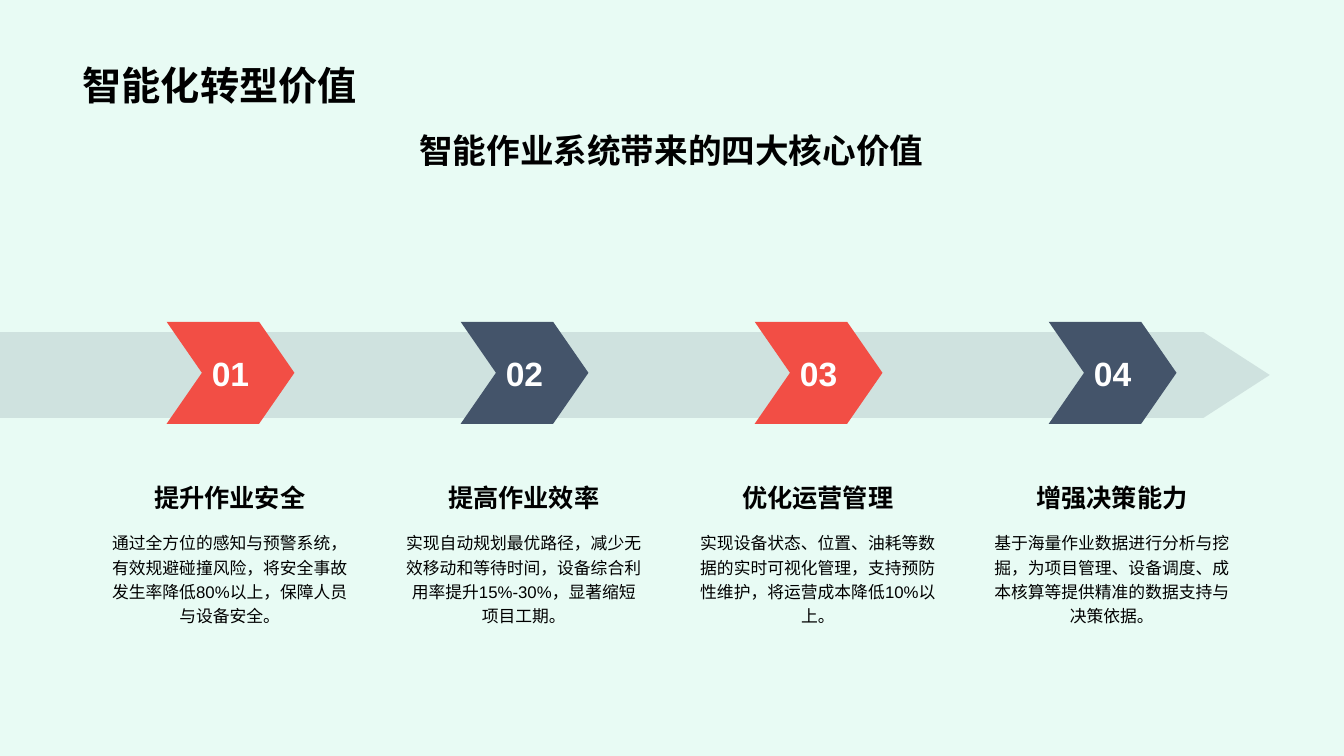
"""Build a slide showing four core values along an arrow band."""
from dataclasses import dataclass

from lxml.etree import SubElement
from pptx import Presentation
from pptx.dml.color import RGBColor
from pptx.enum.lang import MSO_LANGUAGE_ID
from pptx.enum.shapes import MSO_SHAPE
from pptx.enum.text import MSO_ANCHOR, PP_ALIGN
from pptx.oxml.ns import qn
from pptx.shapes.autoshape import Shape
from pptx.slide import Slide
from pptx.util import Cm, Pt


@dataclass(frozen=True)
class Theme:
    font: str = "Arial"
    back: str = "E8FBF4"
    ink: str = "000000"
    white: str = "FFFFFF"
    red: str = "F24E45"
    slate: str = "44546A"
    title: int = 28
    lead: int = 24
    head: int = 18
    body: int = 12


@dataclass(frozen=True)
class Box:
    left: float
    top: float
    width: float
    height: float

    def cm(self) -> tuple[Cm, Cm, Cm, Cm]:
        return Cm(self.left), Cm(self.top), Cm(self.width), Cm(self.height)


@dataclass(frozen=True)
class Value:
    head: str
    body: str
    fill: str


THEME = Theme()
PITCH = 7.41
VALUES = [
    Value("提升作业安全", "通过全方位的感知与预警系统，有效规避碰撞风险，将安全事故发生率降低80%以上，保障人员与设备安全。", THEME.red),
    Value("提高作业效率", "实现自动规划最优路径，减少无效移动和等待时间，设备综合利用率提升15%-30%，显著缩短项目工期。", THEME.slate),
    Value("优化运营管理", "实现设备状态、位置、油耗等数据的实时可视化管理，支持预防性维护，将运营成本降低10%以上。", THEME.red),
    Value("增强决策能力", "基于海量作业数据进行分析与挖掘，为项目管理、设备调度、成本核算等提供精准的数据支持与决策依据。", THEME.slate),
]


def write(shape: Shape, text: str, size: int, color: str = THEME.ink,
          bold: bool = True, align: PP_ALIGN = PP_ALIGN.CENTER,
          anchor: MSO_ANCHOR = MSO_ANCHOR.TOP, wrap: bool = True) -> None:
    """Fill a shape with one styled paragraph."""
    frame = shape.text_frame
    frame.text = text
    frame.word_wrap = wrap
    frame.vertical_anchor = anchor
    para = frame.paragraphs[0]
    para.alignment = align
    font = para.runs[0].font
    font.name = THEME.font
    font.size = Pt(size)
    font.bold = bold
    font.language_id = MSO_LANGUAGE_ID.SIMPLIFIED_CHINESE
    font.color.rgb = RGBColor.from_string(color)
    SubElement(para.runs[0]._r.rPr, qn("a:ea"), typeface=THEME.font)


def label(slide: Slide, box: Box) -> Shape:
    """Add an empty text box."""
    return slide.shapes.add_textbox(*box.cm())


def arrow(slide: Slide, kind: MSO_SHAPE, box: Box, fill: str, point: float) -> Shape:
    """Add a plain filled arrow whose tip has the given depth."""
    shape = slide.shapes.add_shape(kind, *box.cm())
    shape.adjustments[0] = point / box.height
    shape.shadow.inherit = False
    shape.fill.solid()
    shape.fill.fore_color.rgb = RGBColor.from_string(fill)
    shape.line.fill.background()
    return shape


def band(slide: Slide) -> None:
    """Draw the pale arrow behind the steps."""
    shape = arrow(slide, MSO_SHAPE.PENTAGON, Box(0, 8.37, 32, 2.16), THEME.slate, 1.67)
    tint = shape.fill._xPr.find(f".//{qn('a:srgbClr')}")
    SubElement(tint, qn("a:alpha"), val="15000")


def step(slide: Slide, index: int, value: Value) -> None:
    """Draw one numbered chevron with its heading and text."""
    shift = index * PITCH
    mark = arrow(slide, MSO_SHAPE.CHEVRON, Box(4.2 + shift, 8.11, 3.22, 2.57), value.fill, 0.89)
    write(mark, f"{index + 1:02}", THEME.lead, THEME.white,
          anchor=MSO_ANCHOR.MIDDLE, wrap=False)
    head = label(slide, Box(2.54 + shift, 11.28, 6.5, 1.75))
    write(head, value.head, THEME.head, anchor=MSO_ANCHOR.BOTTOM)
    body = label(slide, Box(2.54 + shift, 13.21, 6.5, 3.84))
    write(body, value.body, THEME.body, bold=False)
    body.text_frame.paragraphs[0].line_spacing = 1.2


def main() -> None:
    """Create and save the deck."""
    deck = Presentation()
    deck.slide_width, deck.slide_height = Cm(33.87), Cm(19.05)
    slide = deck.slides.add_slide(deck.slide_layouts[5])
    slide.background.fill.solid()
    slide.background.fill.fore_color.rgb = RGBColor.from_string(THEME.back)
    title = slide.shapes.title
    title.left, title.top, title.width, title.height = Box(1.83, 0.36, 30.18, 2.49).cm()
    write(title, "智能化转型价值", THEME.title, align=PP_ALIGN.LEFT, anchor=MSO_ANCHOR.BOTTOM)
    band(slide)
    lead = label(slide, Box(1.83, 3.15, 30.18, 2.16))
    write(lead, "智能作业系统带来的四大核心价值", THEME.lead)
    for index, value in enumerate(VALUES):
        step(slide, index, value)
    deck.save("out.pptx")


if __name__ == "__main__":
    main()
